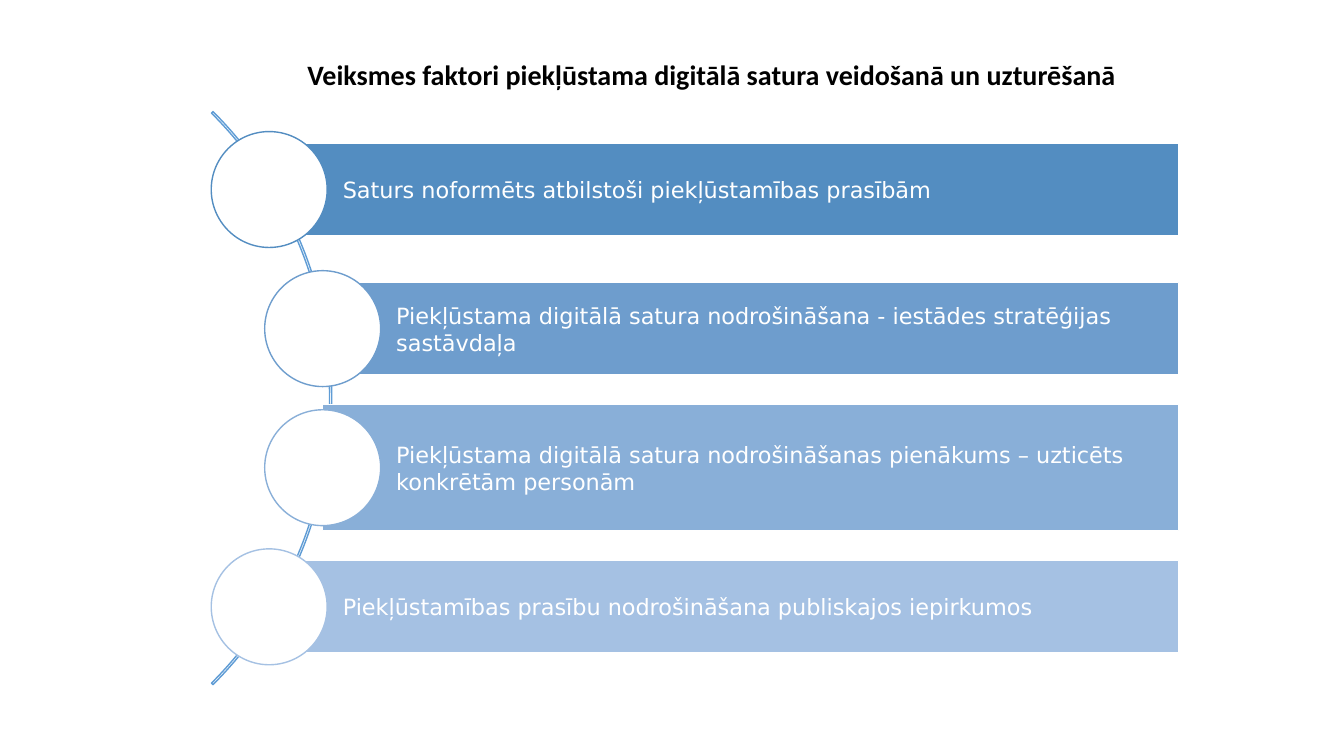
from dataclasses import dataclass

from pptx import Presentation
from pptx import util as u
from pptx.dml.color import RGBColor
from pptx.enum import shapes, text


@dataclass(frozen=True)
class Theme:
    """Colours, fonts and type sizes of the slide."""
    white: str = "FFFFFF"
    black: str = "000000"
    arc: str = "5F9CD5"
    blues: tuple = ("538DC1", "6E9DCD", "89AFD8", "A5C1E3")
    heading_font: str = "Calibri"
    factor_font: str = "DejaVu Sans"
    heading_size: int = 20
    factor_size: int = 16
    line_width: int = 1


def write(shape, words, *, font, size, color, bold=False, indent=0, after=0,
          margins=(0.1, 0.05, 0.1, 0.05)):
    """Put left-aligned, vertically centred text into a shape."""
    frame = shape.text_frame
    frame.word_wrap = True
    frame.vertical_anchor = text.MSO_ANCHOR.MIDDLE
    (frame.margin_left, frame.margin_top,
     frame.margin_right, frame.margin_bottom) = map(u.Inches, margins)
    paragraph = frame.paragraphs[0]
    paragraph.alignment = text.PP_ALIGN.LEFT
    paragraph.space_after = u.Pt(after)
    paragraph._p.get_or_add_pPr().set("marL", str(u.Inches(indent)))
    run = paragraph.add_run()
    run.text = words
    run.font.name = font
    run.font.size = u.Pt(size)
    run.font.bold = bold
    run.font.color.rgb = RGBColor.from_string(color)


class FactorSlide:
    """Draws the elements of the success factor slide."""

    def __init__(self, slide, theme):
        """Keep the slide and its style."""
        self.slide = slide
        self.theme = theme

    def outline(self, kind, box, line, fill=None):
        """Add a preset shape with a line and an optional fill."""
        shape = self.slide.shapes.add_shape(kind, *map(u.Inches, box))
        shape.shadow.inherit = False
        if fill:
            shape.fill.solid()
            shape.fill.fore_color.rgb = RGBColor.from_string(fill)
        else:
            shape.fill.background()
        shape.line.color.rgb = RGBColor.from_string(line)
        shape.line.width = u.Pt(self.theme.line_width)
        return shape

    def heading(self, words, box):
        """Add the heading callout."""
        callout = self.outline(shapes.MSO_SHAPE.RECTANGULAR_CALLOUT, box, self.theme.white)
        write(callout, words, font=self.theme.heading_font, size=self.theme.heading_size,
              color=self.theme.black, bold=True, indent=0.38)

    def arc(self, box):
        """Add the thin arc that links the circles."""
        arc = self.outline(shapes.MSO_SHAPE.BLOCK_ARC, box, self.theme.arc)
        for index, value in enumerate((189, 27, 0.0027)):
            arc.adjustments[index] = value

    def factor(self, words, left, middle, height, color, right=11.69, diameter=1.15):
        """Add a bar with its text and the circle at its left end."""
        bar = self.outline(shapes.MSO_SHAPE.RECTANGLE,
                           (left, middle - height / 2, right - left, height),
                           self.theme.white, color)
        write(bar, words, font=self.theme.factor_font, size=self.theme.factor_size,
              color=self.theme.white, after=6, margins=(0.73, 0.04, 0.04, 0.04))
        radius = diameter / 2
        self.outline(shapes.MSO_SHAPE.OVAL,
                     (left - radius, middle - radius, diameter, diameter),
                     color, self.theme.white)


def main():
    """Build and save the slide."""
    deck = Presentation()
    deck.slide_width, deck.slide_height = u.Inches(13.33), u.Inches(7.5)
    theme = Theme()
    page = FactorSlide(deck.slides.add_slide(deck.slide_layouts[6]), theme)
    page.heading("Veiksmes faktori piekļūstama digitālā satura veidošanā un uzturēšanā",
                 (2.57, 0.34, 10, 0.8))
    page.arc((-4.75, -0.07, 8.04, 8.04))
    outer, inner = 2.67, 3.2
    factors = (
        ("Saturs noformēts atbilstoši piekļūstamības prasībām", outer, 0.92),
        ("Piekļūstama digitālā satura nodrošināšana - iestādes stratēģijas sastāvdaļa",
         inner, 0.92),
        ("Piekļūstama digitālā satura nodrošināšanas pienākums – uzticēts konkrētām personām",
         inner, 1.25),
        ("Piekļūstamības prasību nodrošināšana publiskajos iepirkumos", outer, 0.92),
    )
    first_middle, pitch = 1.88, 1.38
    for index, ((words, left, height), color) in enumerate(zip(factors, theme.blues)):
        page.factor(words, left, first_middle + index * pitch, height, color)
    deck.save("out.pptx")


if __name__ == "__main__":
    main()
